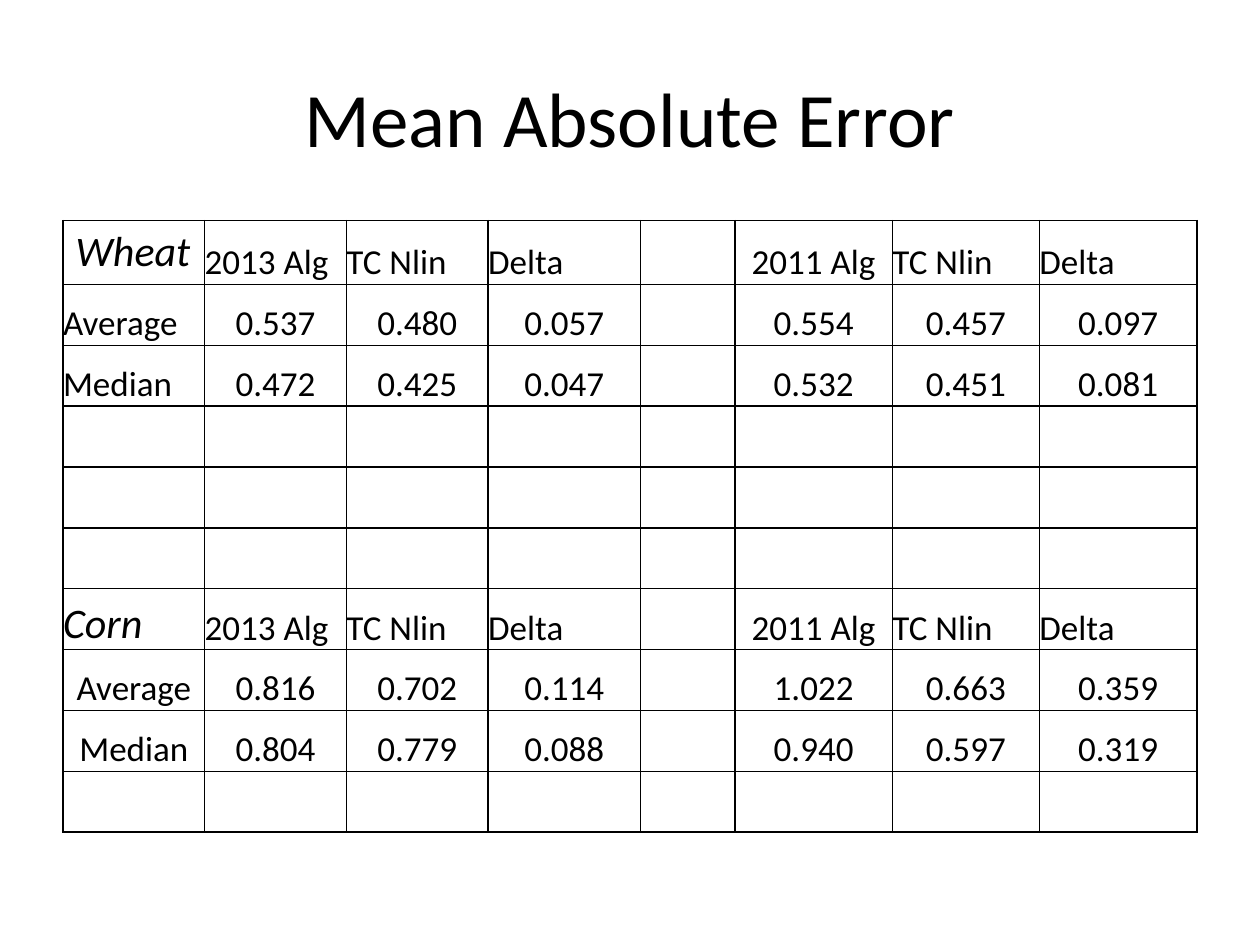
from dataclasses import dataclass

from lxml.etree import SubElement
from pptx import Presentation
from pptx.dml.color import RGBColor
from pptx.enum.text import MSO_ANCHOR as Anchor, PP_ALIGN as Align
from pptx.oxml.ns import qn
from pptx.slide import Slide
from pptx.table import Table, _Cell as Cell
from pptx.util import Pt


@dataclass(frozen=True)
class Theme:
    font: str = "Calibri"
    ink: str = "000000"
    title_size: float = 44
    crop_size: float = 24
    body_size: float = 20
    border_width: float = 1


@dataclass(frozen=True)
class CropSection:
    """One crop's block: a header row followed by its statistics."""
    crop: str
    first_row: int
    label_align: Align
    average: tuple[str, ...]
    median: tuple[str, ...]


THEME = Theme()
COLUMN_WIDTHS = (81, 81, 81, 87, 54, 90, 84, 90)
ROW_COUNT, ROW_HEIGHT = 10, 34.8
TABLE_LEFT, TABLE_TOP = 36, 126
HEADINGS = ("2013 Alg", "TC Nlin", "Delta", "2011 Alg", "TC Nlin", "Delta")
VALUE_COLUMNS = (1, 2, 3, 5, 6, 7)  # column 4 separates the two years

SECTIONS = (
    CropSection("Wheat", 0, Align.LEFT,
                ("0.537", "0.480", "0.057", "0.554", "0.457", "0.097"),
                ("0.472", "0.425", "0.047", "0.532", "0.451", "0.081")),
    CropSection("Corn", 6, Align.CENTER,
                ("0.816", "0.702", "0.114", "1.022", "0.663", "0.359"),
                ("0.804", "0.779", "0.088", "0.940", "0.597", "0.319")),
)


def add_title(slide: Slide, text: str) -> None:
    title = slide.shapes.title
    title.left, title.top, title.width, title.height = Pt(36), Pt(21.6), Pt(648), Pt(90)
    frame = title.text_frame
    frame.text = text
    frame.vertical_anchor = Anchor.MIDDLE
    para = frame.paragraphs[0]
    para.alignment = Align.CENTER
    para.font.name, para.font.size = THEME.font, Pt(THEME.title_size)
    para.font.color.rgb = RGBColor.from_string(THEME.ink)


def outline_cell(cell: Cell) -> None:
    """Clear the fill and rule all four sides; borders precede the fill in the XML."""
    cell.fill.background()
    properties = cell._tc.get_or_add_tcPr()
    for index, side in enumerate(("a:lnL", "a:lnR", "a:lnT", "a:lnB")):
        line = SubElement(properties, qn(side), w=str(Pt(THEME.border_width)))
        fill = SubElement(line, qn("a:solidFill"))
        SubElement(fill, qn("a:srgbClr"), val=THEME.ink)
        properties.insert(index, line)


def write_cell(cell: Cell, text: str, align: Align = Align.LEFT,
               size: float = THEME.body_size, italic: bool = False) -> None:
    cell.text = text
    para = cell.text_frame.paragraphs[0]
    para.alignment = align
    font = para.font
    font.name, font.size, font.italic = THEME.font, Pt(size), italic
    font.color.rgb = RGBColor.from_string(THEME.ink)


def seat_cell(cell: Cell) -> None:
    """Stand the text on the bottom border, without margins."""
    cell.vertical_anchor = Anchor.BOTTOM
    cell.margin_left = cell.margin_right = cell.margin_top = cell.margin_bottom = 0


def add_grid(slide: Slide) -> Table:
    frame = slide.shapes.add_table(
        ROW_COUNT, len(COLUMN_WIDTHS), Pt(TABLE_LEFT), Pt(TABLE_TOP),
        Pt(sum(COLUMN_WIDTHS)), Pt(ROW_COUNT * ROW_HEIGHT))
    table = frame.table
    table.first_row = table.horz_banding = False
    for column, width in zip(table.columns, COLUMN_WIDTHS):
        column.width = Pt(width)
    for row in table.rows:
        row.height = Pt(ROW_HEIGHT)
    for cell in table.iter_cells():
        outline_cell(cell)
    return table


def fill_section(table: Table, section: CropSection) -> None:
    top = section.first_row
    # Header row
    write_cell(table.cell(top, 0), section.crop, size=THEME.crop_size, italic=True)
    if top > 0:  # the crop name in the top row keeps the default margins
        seat_cell(table.cell(top, 0))
    for column, heading in zip(VALUE_COLUMNS, HEADINGS):
        align = Align.CENTER if heading == "2011 Alg" else Align.LEFT
        write_cell(table.cell(top, column), heading, align)
        seat_cell(table.cell(top, column))
    # Statistics rows
    statistics = (("Average", section.average), ("Median", section.median))
    for row, (label, values) in enumerate(statistics, start=top + 1):
        write_cell(table.cell(row, 0), label, section.label_align)
        seat_cell(table.cell(row, 0))
        for column, value in zip(VALUE_COLUMNS, values):
            write_cell(table.cell(row, column), value, Align.CENTER)
            seat_cell(table.cell(row, column))


def main() -> None:
    deck = Presentation()
    deck.slide_width, deck.slide_height = Pt(720), Pt(540)
    slide = deck.slides.add_slide(deck.slide_layouts.get_by_name("Title Only"))
    add_title(slide, "Mean Absolute Error")
    table = add_grid(slide)
    for section in SECTIONS:
        fill_section(table, section)
    deck.save("out.pptx")


if __name__ == "__main__":
    main()
